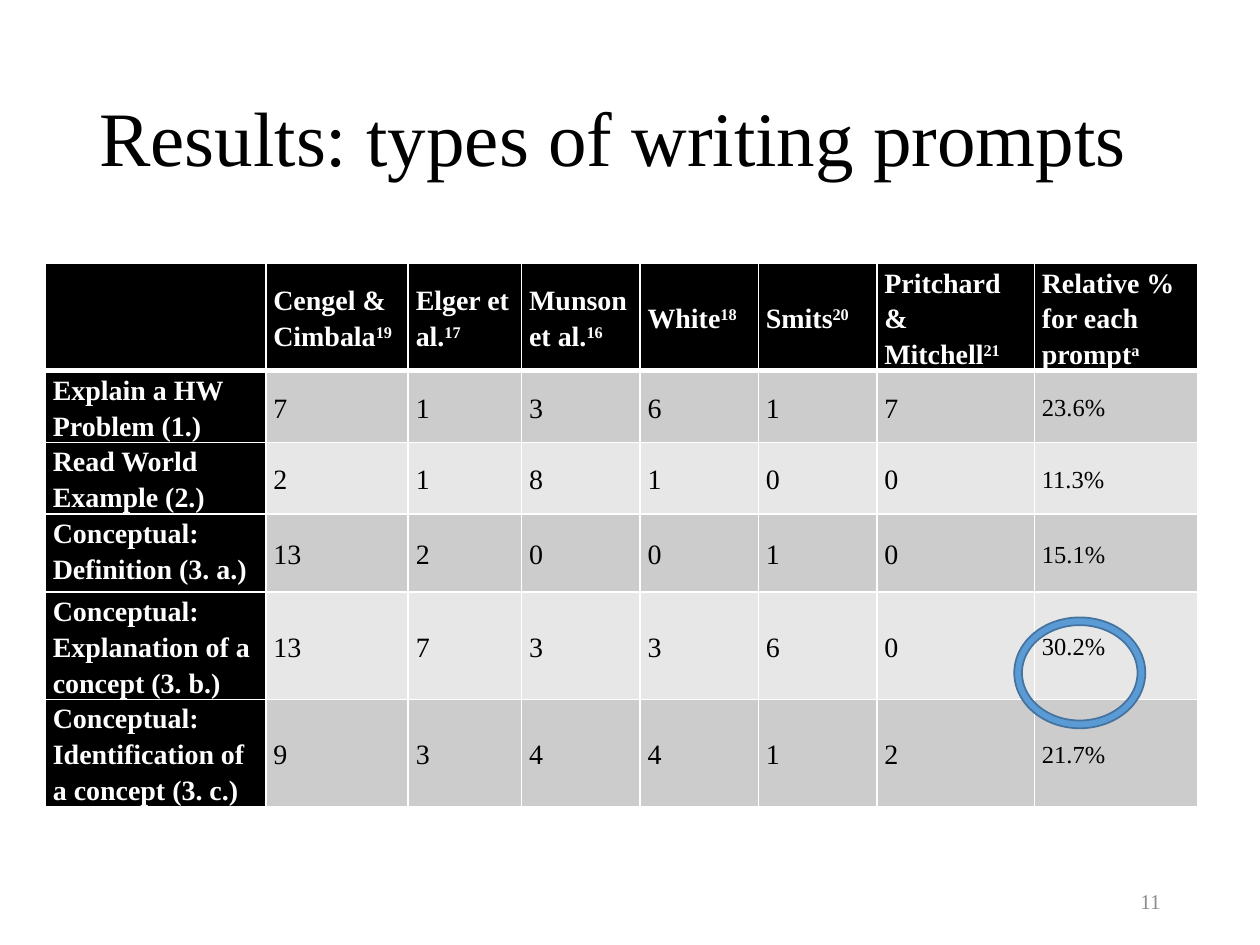
"""Build the slide of writing prompt types by textbook."""
from lxml.etree import SubElement
from pptx import Presentation
from pptx.dml.color import RGBColor
from pptx.enum.shapes import MSO_SHAPE
from pptx.enum.text import MSO_ANCHOR, PP_ALIGN
from pptx.oxml.ns import qn
from pptx.util import Inches, Pt


def add_run(p, text, size, color, bold=False, superscript=False):
    r = p.add_run()
    r.text = text
    r.font.name = "Times New Roman"
    r.font.size = Pt(size)
    r.font.bold = bold
    r.font.color.rgb = RGBColor.from_string(color)
    if superscript:
        r._r.get_or_add_rPr().set("baseline", "30000")


def add_border(cell, side, width):
    ln = SubElement(cell._tc.get_or_add_tcPr(), qn(f"a:ln{side}"), w=str(Pt(width)))
    fill = SubElement(ln, qn("a:solidFill"))
    SubElement(fill, qn("a:srgbClr"), val="FFFFFF")


prs = Presentation()
prs.slide_width, prs.slide_height = Inches(10), Inches(7.5)
s = prs.slides.add_slide(prs.slide_layouts[5])

title = s.shapes.title
title.left, title.top = Inches(0.69), Inches(0.4)
title.width, title.height = Inches(8.62), Inches(1.45)
title.text_frame.vertical_anchor = MSO_ANCHOR.MIDDLE
p = title.text_frame.paragraphs[0]
p.alignment = PP_ALIGN.LEFT
p.line_spacing = 0.9
add_run(p, "Results: types of writing prompts", 44, "000000")

headers = [("", ""), ("Cengel & Cimbala", "19"), ("Elger et al.", "17"),
           ("Munson et al.", "16"), ("White", "18"), ("Smits", "20"),
           ("Pritchard & Mitchell", "21"), ("Relative % for each prompt", "a")]
prompts = [
    ("Explain a HW Problem (1.)", 7, 1, 3, 6, 1, 7, "23.6%"),
    ("Read World Example (2.)", 2, 1, 8, 1, 0, 0, "11.3%"),
    ("Conceptual: Definition (3. a.)", 13, 2, 0, 0, 1, 0, "15.1%"),
    ("Conceptual: Explanation of a concept (3. b.)", 13, 7, 3, 3, 6, 0, "30.2%"),
    ("Conceptual: Identification of a concept (3. c.)", 9, 3, 4, 4, 1, 2, "21.7%"),
]
rows = [headers] + [[(str(value), "") for value in prompt] for prompt in prompts]
col_widths = [1.75, 1.13, 0.9, 0.94, 0.94, 0.94, 1.25, 1.3]
row_heights = [0.82, 0.41, 0.41, 0.62, 0.82, 0.82]

table = s.shapes.add_table(len(rows), len(headers), Inches(0.36), Inches(2.09),
                           Inches(sum(col_widths)), Inches(sum(row_heights))).table
table.first_row = table.first_col = True
for column, width in zip(table.columns, col_widths):
    column.width = Inches(width)
for row, height in zip(table.rows, row_heights):
    row.height = Inches(height)

for i, row in enumerate(rows):
    for j, (text, note) in enumerate(row):
        cell = table.cell(i, j)
        heading = i == 0 or j == 0
        cell.margin_left = cell.margin_right = Inches(0.06)
        cell.margin_top = cell.margin_bottom = 0
        cell.vertical_anchor = MSO_ANCHOR.TOP if j == 0 else MSO_ANCHOR.MIDDLE
        for side, width in zip("LRTB", (1, 1, 3 if i == 1 else 1, 3 if i == 0 else 1)):
            add_border(cell, side, width)
        cell.fill.solid()
        fill = "000000" if heading else "CCCCCC" if i % 2 else "E7E7E7"
        cell.fill.fore_color.rgb = RGBColor.from_string(fill)
        p = cell.text_frame.paragraphs[0]
        p.line_spacing = 1.15
        size = 14 if i and j == len(headers) - 1 else 16
        color = "FFFFFF" if heading else "000000"
        if text:
            add_run(p, text, size, color, heading)
        if note:
            add_run(p, note, size, color, heading, superscript=True)

number = s.shapes.add_textbox(Inches(7.06), Inches(6.95), Inches(2.25), Inches(0.4))
tf = number.text_frame
tf.word_wrap = True
tf.vertical_anchor = MSO_ANCHOR.MIDDLE
p = tf.paragraphs[0]
p.alignment = PP_ALIGN.RIGHT
add_run(p, "11", 12, "8C8C8C")

ring = s.shapes.add_shape(MSO_SHAPE.DONUT, Inches(8.05), Inches(4.9),
                          Inches(1.04), Inches(0.88))
ring.adjustments[0] = 0.07
ring.shadow.inherit = False
ring.fill.solid()
ring.fill.fore_color.rgb = RGBColor.from_string("5B9BD5")
ring.line.color.rgb = RGBColor.from_string("43739E")
ring.line.width = Pt(1)

prs.save("out.pptx")
